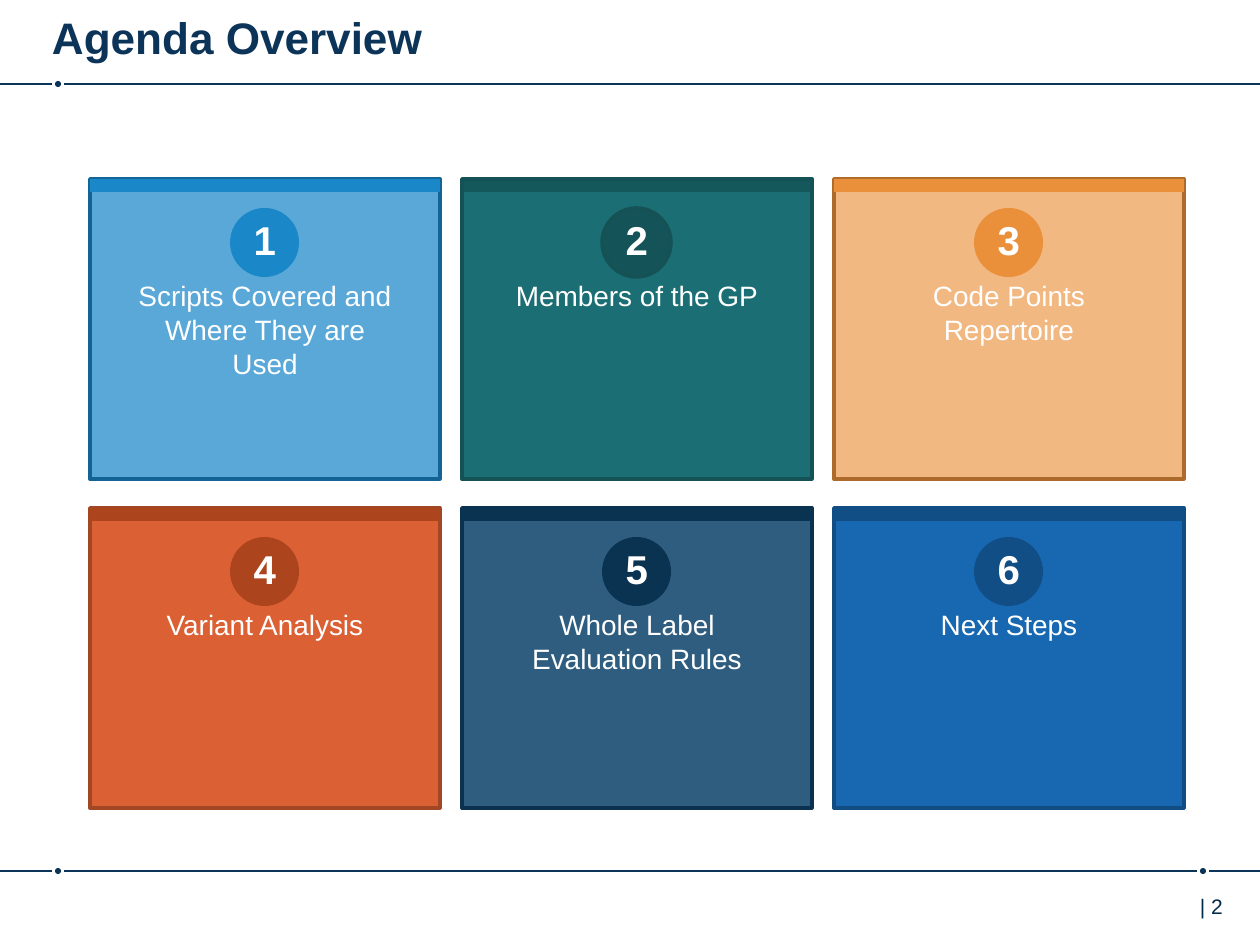
"""Build the agenda overview slide with six numbered cards."""
from dataclasses import dataclass

from lxml import etree
from pptx import Presentation
from pptx import util as u
from pptx.dml.color import RGBColor
from pptx.enum import shapes, text
from pptx.oxml.ns import qn

SCALE = 914400 / 126
CARD_WIDTH, CARD_HEIGHT, BAR_HEIGHT, BADGE = 350, 300, 13, 69
COLUMN_STEP, ROW_STEP = 372, 329
BOX_INSETS = (13, 6, 13, 6)


@dataclass(frozen=True)
class Theme:
    font: str = "Arial"
    navy: str = "0C3458"
    footer: str = "002B49"
    white: str = "FFFFFF"
    title_size: float = 25.2
    number_size: int = 23
    label_size: int = 16
    footer_size: int = 12


@dataclass(frozen=True)
class Card:
    label: str
    fill: str
    border: str
    accent: str
    opacity: int = 100
    bar_opacity: int = 100


CARDS = [
    Card("Scripts Covered and Where They are Used", "1A87C9", "136495", "1A87C9", 72),
    Card("Members of the GP", "1B6F74", "145256", "145357", bar_opacity=80),
    Card("Code Points Repertoire", "EA903A", "AD6B2B", "EA903A", 63),
    Card("Variant Analysis", "DB6033", "A24726", "AC441E"),
    Card("Whole Label Evaluation Rules", "0D436C", "0A3250", "0A3251", 86),
    Card("Next Steps", "1768B1", "114D83", "114E85"),
]


def px(length):
    return u.Emu(round(length * SCALE))


def write(frame, words, *, font, size, color, bold=False,
          align=text.PP_ALIGN.LEFT, insets=BOX_INSETS, anchor=text.MSO_ANCHOR.TOP):
    frame.word_wrap = True
    frame.auto_size = text.MSO_AUTO_SIZE.NONE
    frame.vertical_anchor = anchor
    frame.margin_left, frame.margin_top, frame.margin_right, frame.margin_bottom = map(px, insets)
    paragraph = frame.paragraphs[0]
    paragraph.alignment = align
    run = paragraph.add_run()
    run.text = words
    run.font.name, run.font.size, run.font.bold = font, u.Pt(size), bold
    run.font.color.rgb = RGBColor.from_string(color)


class SlideBuilder:
    def __init__(self, slide, theme):
        self.slide, self.theme = slide, theme

    def title(self, words, left, top, width, height):
        shape = self.slide.shapes.title
        shape.left, shape.top, shape.width, shape.height = map(px, (left, top, width, height))
        write(shape.text_frame, words, font=self.theme.font, size=self.theme.title_size,
              color=self.theme.navy, bold=True, insets=(0, 6, 0, 6),
              anchor=text.MSO_ANCHOR.MIDDLE)

    def text_box(self, words, left, top, width, height, **style):
        box = self.slide.shapes.add_textbox(*map(px, (left, top, width, height)))
        write(box.text_frame, words, font=self.theme.font, **style)

    def shape(self, kind, left, top, width, height, fill, border=None, opacity=100):
        shape = self.slide.shapes.add_shape(kind, *map(px, (left, top, width, height)))
        shape.shadow.inherit = False
        shape.fill.solid()
        shape.fill.fore_color.rgb = RGBColor.from_string(fill)
        if opacity < 100:
            color = shape.fill._xPr.find(f".//{qn('a:srgbClr')}")
            etree.SubElement(color, qn("a:alpha"), val=str(opacity * 1000))
        if border:
            shape.line.color.rgb = RGBColor.from_string(border)
            shape.line.width = u.Pt(2)
        else:
            shape.line.fill.background()

    def rule(self, y, dots):
        edges = [0]
        for x in dots:
            self.shape(shapes.MSO_SHAPE.OVAL, x - 3, y - 3, 6, 6, self.theme.navy)
            edges += [x - 6, x + 6]
        edges.append(1260)
        for start, end in zip(edges[::2], edges[1::2]):
            line = self.slide.shapes.add_connector(
                shapes.MSO_CONNECTOR.STRAIGHT, *map(px, (start, y, end, y)))
            line.line.color.rgb = RGBColor.from_string(self.theme.navy)
            line.line.width = u.Pt(1)
            etree.SubElement(line._element.spPr, qn("a:effectLst"))

    def card(self, number, card, left, top):
        rectangle, oval = shapes.MSO_SHAPE.RECTANGLE, shapes.MSO_SHAPE.OVAL
        style = {"color": self.theme.white, "align": text.PP_ALIGN.CENTER}
        self.shape(rectangle, left, top, CARD_WIDTH, CARD_HEIGHT,
                   card.fill, card.border, card.opacity)
        self.shape(rectangle, left, top, CARD_WIDTH, BAR_HEIGHT,
                   card.accent, opacity=card.bar_opacity)
        self.shape(oval, left + (CARD_WIDTH - BADGE) // 2, top + 29, BADGE, BADGE,
                   card.accent, card.border if number == 2 else None)
        self.text_box(card.label, left + 32, top + 94, CARD_WIDTH - 64, 149,
                      size=self.theme.label_size, **style)
        self.text_box(str(number), left, top + 30, CARD_WIDTH, 62,
                      size=self.theme.number_size, bold=True, **style)


def main():
    presentation = Presentation()
    presentation.slide_width, presentation.slide_height = px(1260), px(945)
    theme = Theme()
    builder = SlideBuilder(presentation.slides.add_slide(presentation.slide_layouts[5]), theme)
    builder.rule(84, [58])
    builder.rule(871, [58, 1203])
    builder.text_box("| 2", 1200, 888, 60, 50, size=theme.footer_size,
                     color=theme.footer, insets=(0, 6, 0, 6))
    for index, card in enumerate(CARDS):
        row, column = divmod(index, 3)
        builder.card(index + 1, card, 90 + column * COLUMN_STEP, 179 + row * ROW_STEP)
    builder.title("Agenda Overview", 52, 6, 1104, 62)
    presentation.save("out.pptx")


if __name__ == "__main__":
    main()
